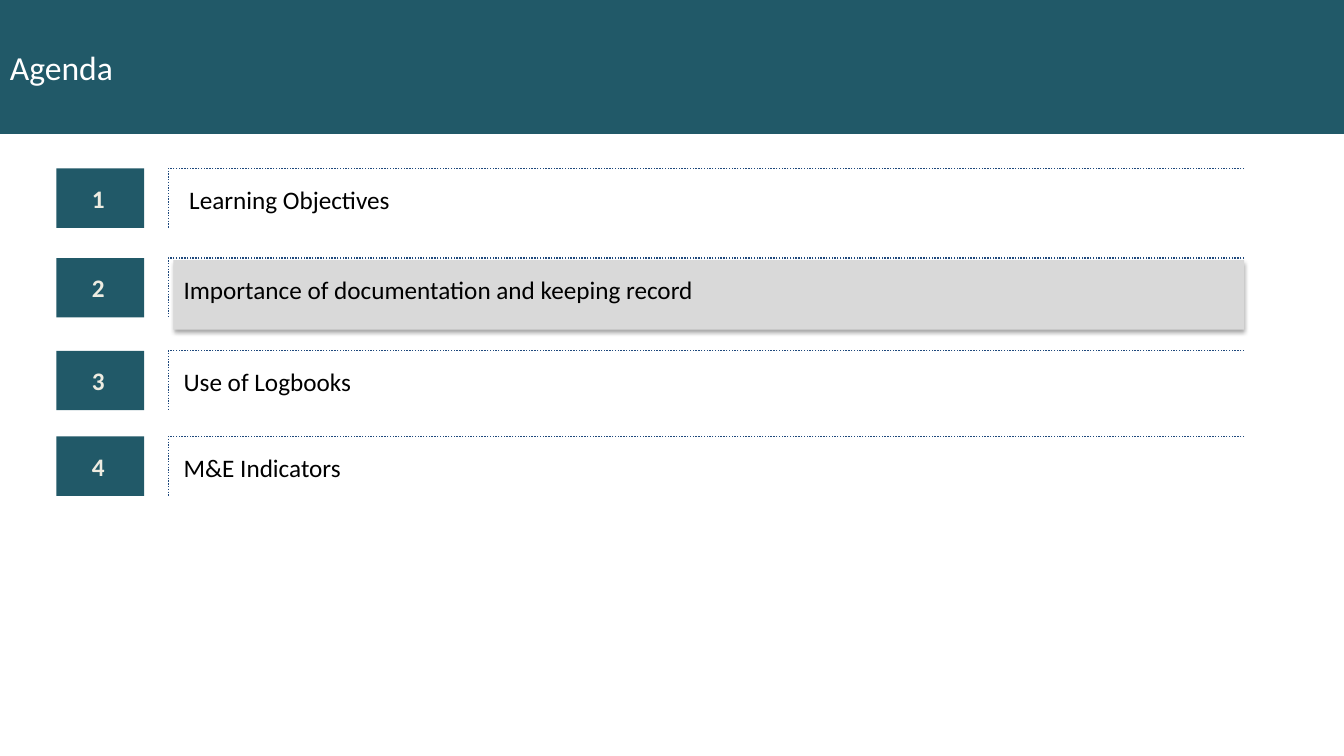
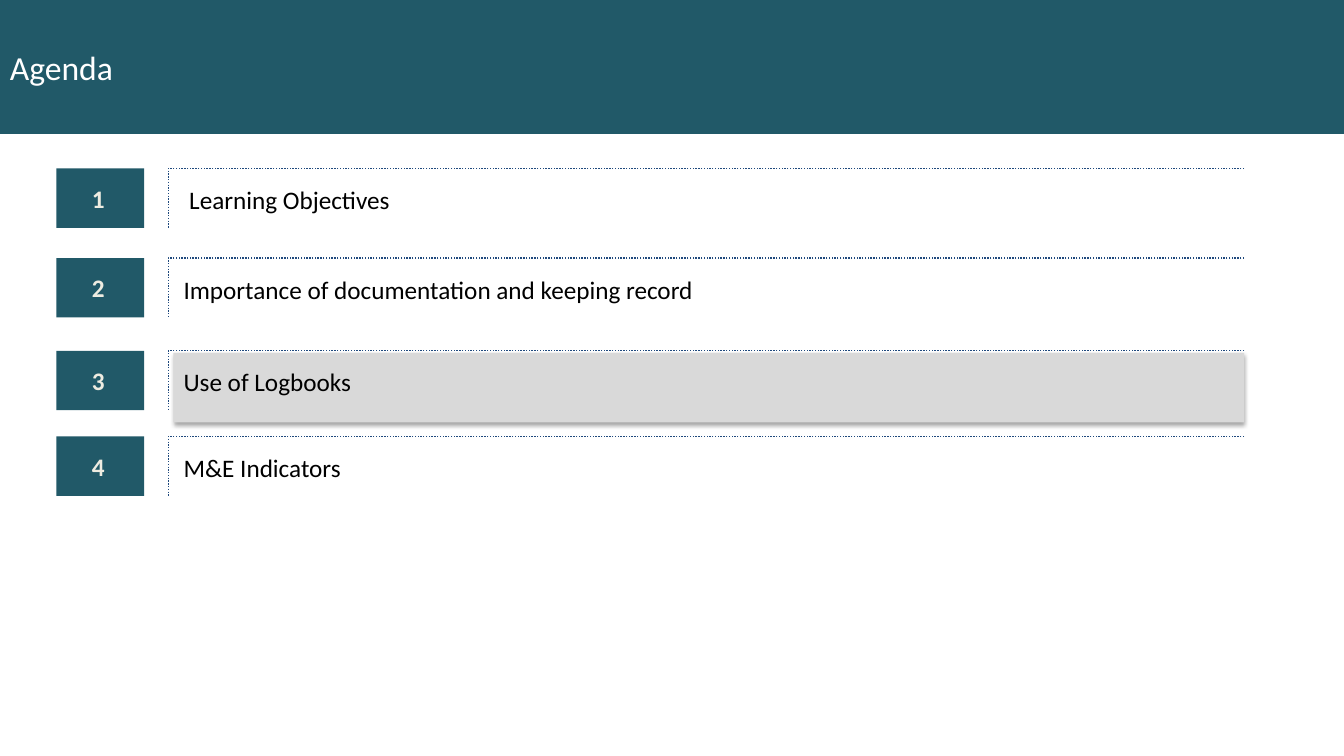
from pptx import Presentation, util as u
from pptx.dml import color
from pptx.enum import dml, shapes, text
from pptx.oxml import parse_xml
from pptx.oxml.ns import nsdecls

COLORS = {
    "teal": "215968", "navy": "1F497D", "grey": "D9D9D9",
    "white": "FFFFFF", "cream": "EEECE1", "black": "000000",
}
SLIDE_SIZE = (13.33, 7.5)
AGENDA = [
    (1.67, " Learning Objectives"),
    (2.56, "Importance of documentation and keeping record"),
    (3.48, "Use of Logbooks"),
    (4.33, "M&E Indicators"),
]
ROW_HEIGHT = 0.59
RULE_LEFT, RULE_RIGHT = 1.67, 12.34
FORMATS = {
    "title": {"size": u.Pt(24), "color": "white"},
    "number": {"size": u.Pt(18), "bold": True, "color": "cream"},
    "topic": {"size": u.Pt(18), "color": "black"},
}


def rgb(name):
    return color.RGBColor.from_string(COLORS[name])


class AgendaDeck:
    """Build agenda slides that share one style and mark the current topic."""

    def __init__(self):
        self.deck = Presentation()
        self.deck.slide_width, self.deck.slide_height = map(u.Inches, SLIDE_SIZE)
        self.slide = None

    def new_slide(self):
        self.slide = self.deck.slides.add_slide(self.deck.slide_layouts[6])

    def label(self, holder, wording, style, insets, align, anchor):
        frame = holder.text_frame
        frame.word_wrap = True
        frame.vertical_anchor = anchor
        for side, inset in zip(("left", "top", "right", "bottom"), insets):
            setattr(frame, f"margin_{side}", u.Inches(inset))
        paragraph = frame.paragraphs[0]
        paragraph.alignment = align
        run = paragraph.add_run()
        run.text = wording
        run.font.name = "Calibri"
        for key, value in FORMATS[style].items():
            if key == "color":
                run.font.color.rgb = rgb(value)
            else:
                setattr(run.font, key, value)
        return paragraph

    def block(self, parent, box, fill):
        block = parent.add_shape(shapes.MSO_SHAPE.RECTANGLE, *map(u.Inches, box))
        block.shadow.inherit = False
        block.fill.solid()
        block.fill.fore_color.rgb = rgb(fill)
        block.line.fill.background()
        return block

    def title(self, wording):
        band = self.block(self.slide.shapes, (0, 0, SLIDE_SIZE[0], 1.33), "teal")
        self.label(band, wording, "title", (0.1, 0.05, 0.1, 0.05),
                   text.PP_ALIGN.LEFT, text.MSO_ANCHOR.MIDDLE)

    def highlight(self, row_top):
        bar = self.block(self.slide.shapes, (1.72, row_top + 0.02, 10.62, 0.69), "grey")
        effects = bar._element.spPr.find("{*}effectLst")
        effects.append(parse_xml(
            f'<a:outerShdw {nsdecls("a")} blurRad="{u.Pt(3.1)}" dist="{u.Pt(1.8)}" '
            f'dir="5400000" rotWithShape="0"><a:srgbClr val="{COLORS["black"]}">'
            '<a:alpha val="35000"/></a:srgbClr></a:outerShdw>'))

    def rule(self, parent, top):
        corner = [(RULE_LEFT, top), (RULE_LEFT, top + ROW_HEIGHT)]
        outline = parent.build_freeform(u.Inches(RULE_RIGHT), u.Inches(top))
        outline.add_line_segments(
            [(u.Inches(x), u.Inches(y)) for x, y in corner], close=False)
        rule = outline.convert_to_shape()
        rule.shadow.inherit = False
        rule.fill.background()
        rule.line.color.rgb = rgb("navy")
        for key, value in {"width": u.Pt(1), "dash_style": dml.MSO_LINE.ROUND_DOT}.items():
            setattr(rule.line, key, value)

    def row(self, number, top, wording):
        row = self.slide.shapes.add_group_shape().shapes
        badge = self.block(row, (0.56, top, 0.87, ROW_HEIGHT), "teal")
        self.label(badge, str(number), "number", (0.06, 0.05, 0.1, 0.05),
                   text.PP_ALIGN.CENTER, text.MSO_ANCHOR.MIDDLE)
        topic = row.add_textbox(*map(u.Inches, (1.82, top + 0.18, 9.91, 0.29)))
        paragraph = self.label(topic, wording, "topic", (0, 0, 0, 0),
                               text.PP_ALIGN.LEFT, text.MSO_ANCHOR.TOP)
        paragraph.line_spacing = 0.95
        self.rule(row, top)

    def agenda(self, current):
        self.new_slide()
        self.highlight(AGENDA[current - 1][0])
        self.title("Agenda")
        for number, (top, wording) in enumerate(AGENDA, start=1):
            self.row(number, top, wording)


def main():
    agenda_deck = AgendaDeck()
    for current in (2, 3):
        agenda_deck.agenda(current)
    agenda_deck.deck.save("out.pptx")


if __name__ == "__main__":
    main()
